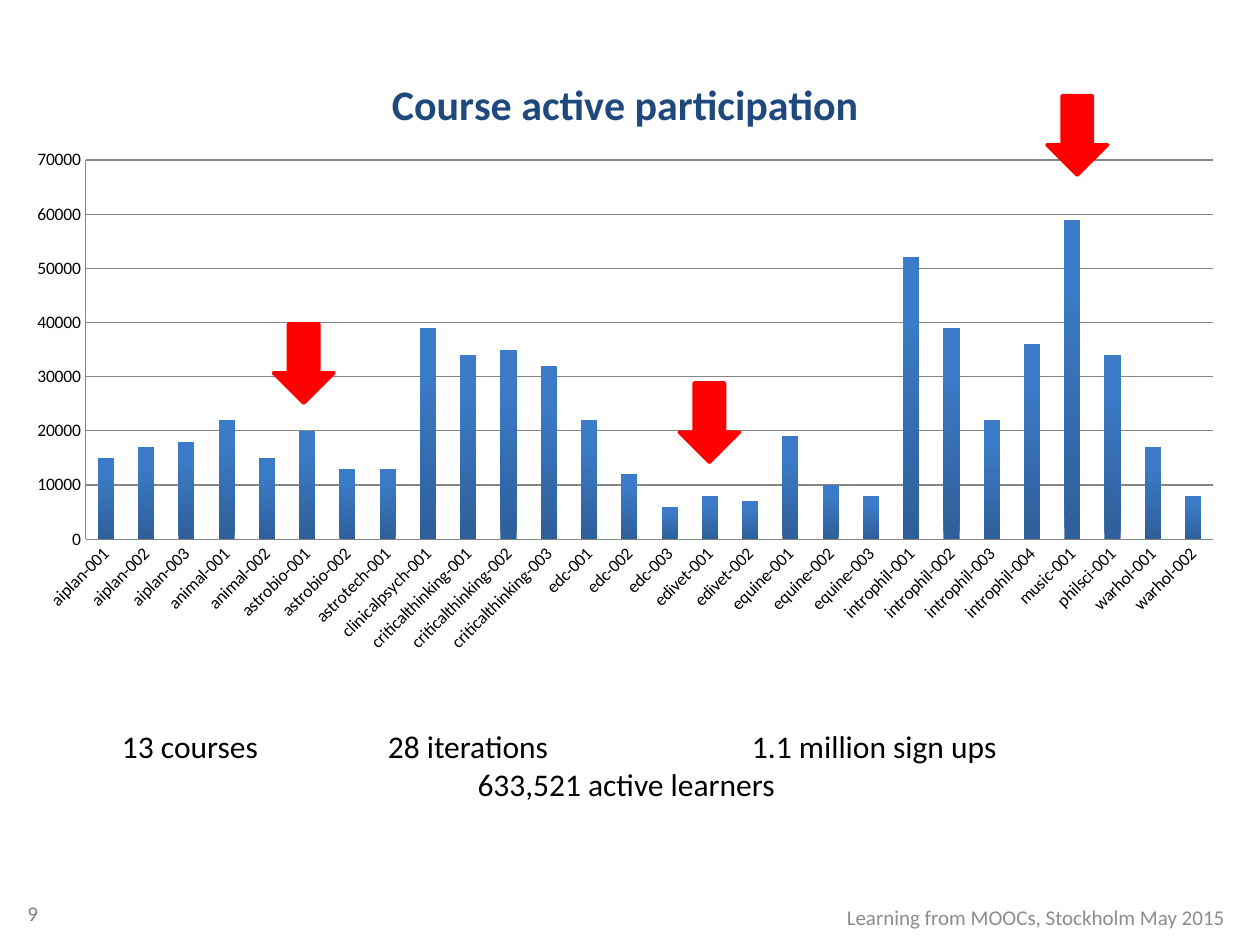
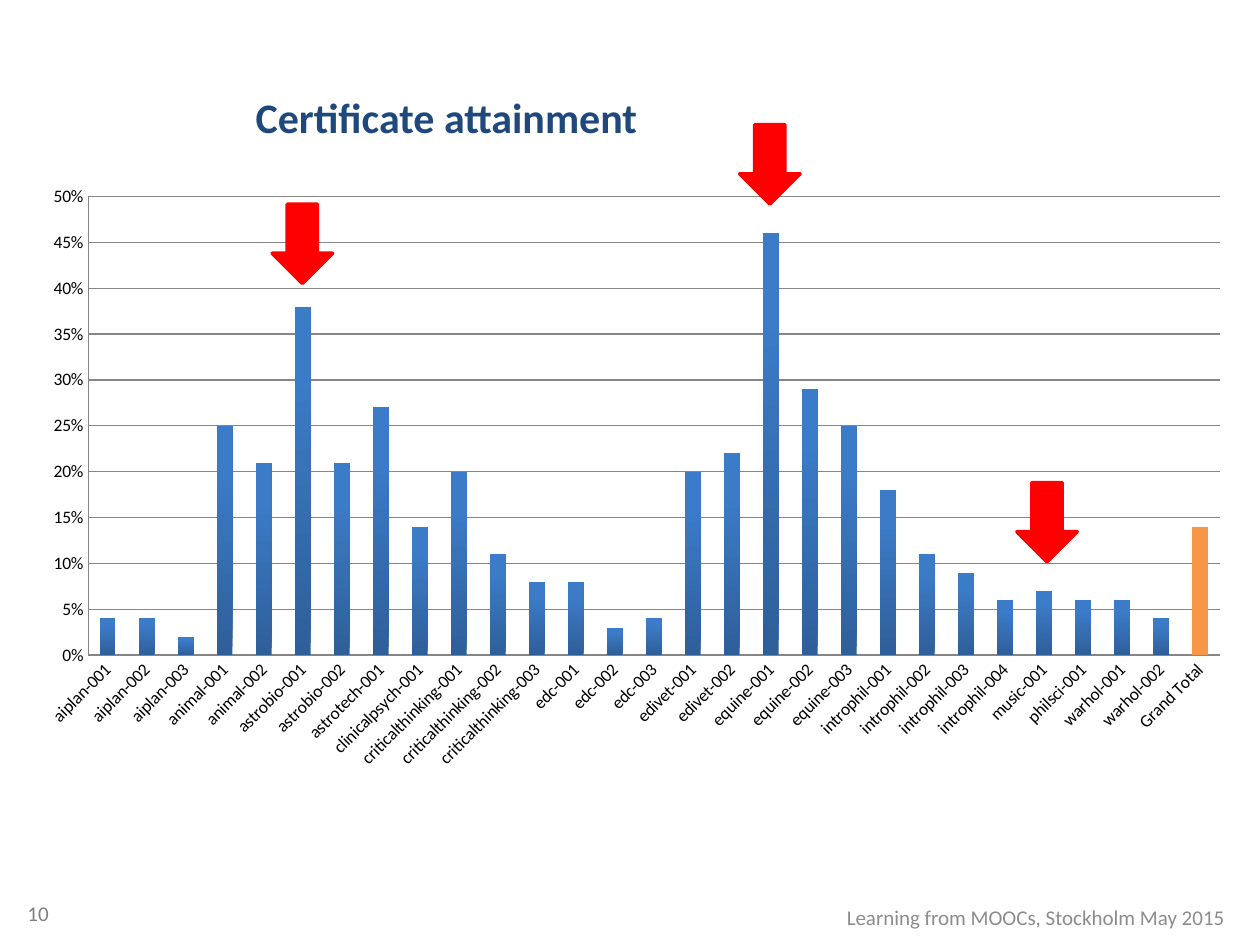
from dataclasses import dataclass

from lxml.etree import SubElement
from pptx import Presentation
from pptx.chart.data import CategoryChartData
from pptx.dml.color import RGBColor
from pptx.enum.chart import XL_CHART_TYPE, XL_TICK_MARK
from pptx.enum.shapes import MSO_SHAPE
from pptx.enum.text import MSO_ANCHOR, PP_ALIGN
from pptx.oxml import parse_xml
from pptx.oxml.ns import nsdecls, qn
from pptx.util import Inches, Pt


@dataclass(frozen=True)
class Theme:
    font: str = "Calibri"
    title: RGBColor = RGBColor(0x1F, 0x49, 0x7D)
    text: RGBColor = RGBColor(0, 0, 0)
    footer: RGBColor = RGBColor(0x8C, 0x8C, 0x8C)
    number: RGBColor = RGBColor(0x80, 0x80, 0x80)
    grid: RGBColor = RGBColor(0x86, 0x86, 0x86)
    bar_foot: RGBColor = RGBColor(0x2E, 0x5F, 0x99)
    bar_top: RGBColor = RGBColor(0x3C, 0x7B, 0xC7)
    total: RGBColor = RGBColor(0xF7, 0x96, 0x46)
    marker: RGBColor = RGBColor(0xFF, 0, 0)
    title_size: Pt = Pt(24)
    body_size: Pt = Pt(18)
    footer_size: Pt = Pt(12)
    chart_size: Pt = Pt(10)


theme = Theme()


def add_text(slide, box, lines, size, color, align=PP_ALIGN.LEFT, anchor=MSO_ANCHOR.TOP, bold=False):
    frame = slide.shapes.add_textbox(*map(Inches, box)).text_frame
    frame.word_wrap = True
    frame.vertical_anchor = anchor
    frame.text = "\n".join(lines)
    for paragraph in frame.paragraphs:
        paragraph.alignment = align
        paragraph.font.name = theme.font
        paragraph.font.size = size
        paragraph.font.bold = bold
        paragraph.font.color.rgb = color
    return frame


def set_layout(parent, chart_box, place, **modes):
    left, top, width, height = chart_box
    fractions = [(place[0] - left) / width, (place[1] - top) / height]
    if len(place) == 4:
        fractions += [place[2] / width, place[3] / height]
    for old in parent.findall(qn("c:layout")):
        parent.remove(old)
    layout = parse_xml(f"<c:layout {nsdecls('c')}><c:manualLayout/></c:layout>")
    settings = modes | {"xMode": "edge", "yMode": "edge"} | dict(zip("xywh", fractions))
    for tag, value in settings.items():
        SubElement(layout[0], qn(f"c:{tag}")).set("val", str(value))
    text = parent.find(qn("c:tx"))
    parent.insert(0 if text is None else parent.index(text) + 1, layout)


course_runs = {
    "aiplan": 3, "animal": 2, "astrobio": 2, "astrotech": 1, "clinicalpsych": 1,
    "criticalthinking": 3, "edc": 3, "edivet": 2, "equine": 3, "introphil": 4,
    "music": 1, "philsci": 1, "warhol": 2,
}
iterations = [f"{course}-{run:03}" for course, runs in course_runs.items() for run in range(1, runs + 1)]

active_learners = [
    15000, 17000, 18000, 22000, 15000, 20000, 13000, 13000, 39000, 34000,
    35000, 32000, 22000, 12000, 6000, 8000, 7000, 19000, 10000, 8000,
    52000, 39000, 22000, 36000, 59000, 34000, 17000, 8000,
]
certificate_rates = [
    0.04, 0.04, 0.02, 0.25, 0.21, 0.38, 0.21, 0.27, 0.14, 0.2,
    0.11, 0.08, 0.08, 0.03, 0.04, 0.2, 0.22, 0.46, 0.29, 0.25,
    0.18, 0.11, 0.09, 0.06, 0.07, 0.06, 0.06, 0.04, 0.14,
]

pages = [
    dict(number=9, categories=iterations, values=active_learners, top=70000, step=10000,
         format="General", box=(0.11, 0.44, 9.72, 4.83), plot=(0.68, 1.27, 8.95, 3.01),
         markers=[(8.31, 0.76), (2.17, 2.57), (5.39, 3.04)]),
    dict(number=10, categories=iterations + ["Grand Total"], values=certificate_rates, top=0.5, step=0.05,
         format="0%", box=(0.2, 1.39, 9.67, 4.8), plot=(0.7, 1.56, 8.98, 3.64),
         markers=[(5.87, 0.99), (2.16, 1.62), (8.07, 3.83)]),
]

presentation = Presentation()
presentation.slide_width = Inches(10)
presentation.slide_height = Inches(7.5)
slides = []
charts = []

for page in pages:
    slide = presentation.slides.add_slide(presentation.slide_layouts[6])
    slides.append(slide)
    add_text(slide, (5.63, 7.13, 4.19, 0.29), ["Learning from MOOCs, Stockholm May 2015"],
             theme.footer_size, theme.footer, PP_ALIGN.RIGHT, MSO_ANCHOR.MIDDLE)
    add_text(slide, (0.12, 7.11, 0.4, 0.27), [str(page["number"])],
             theme.footer_size, theme.number, anchor=MSO_ANCHOR.MIDDLE)

    data = CategoryChartData(number_format=page["format"])
    data.categories = page["categories"]
    data.add_series("Series 1", page["values"])
    chart = slide.shapes.add_chart(
        XL_CHART_TYPE.COLUMN_CLUSTERED, *map(Inches, page["box"]), data).chart
    charts.append(chart)
    chart.has_legend = False
    chart.has_title = False
    chart.font.name = theme.font
    chart.font.size = theme.chart_size
    chart.font.color.rgb = theme.text

    plot = chart.plots[0]
    plot.gap_width = 150
    plot.vary_by_categories = False
    bar_fill = plot.series[0].format.fill
    bar_fill.gradient()
    bar_fill.gradient_angle = 90
    for stop, position, color in zip(bar_fill.gradient_stops, (0, 0.8), (theme.bar_foot, theme.bar_top)):
        stop.position = position
        stop.color.rgb = color

    for axis in (chart.category_axis, chart.value_axis):
        axis.major_tick_mark = XL_TICK_MARK.NONE
        axis.minor_tick_mark = XL_TICK_MARK.NONE
        axis.format.line.color.rgb = theme.grid
        axis.tick_labels.font.size = theme.chart_size
    chart.category_axis._element.find(f"{qn('c:txPr')}/{qn('a:bodyPr')}").set("rot", "-2700000")
    value_axis = chart.value_axis
    value_axis.minimum_scale = 0
    value_axis.maximum_scale = page["top"]
    value_axis.major_unit = page["step"]
    value_axis.tick_labels.number_format = page["format"]
    value_axis.tick_labels.number_format_is_linked = False
    value_axis.major_gridlines.format.line.color.rgb = theme.grid
    plot_area = chart.category_axis._element.getparent()
    set_layout(plot_area, page["box"], page["plot"], layoutTarget="inner")

    for left, top in page["markers"]:
        marker = slide.shapes.add_shape(
            MSO_SHAPE.DOWN_ARROW, Inches(left), Inches(top), Inches(0.48), Inches(0.63))
        marker.shadow.inherit = False
        marker.fill.solid()
        marker.fill.fore_color.rgb = theme.marker
        marker.line.color.rgb = theme.marker
        marker.line.width = Pt(2)

participation_slide, certificate_slide = slides
participation_chart, certificate_chart = charts

participation_title = participation_chart.chart_title
participation_title.text_frame.text = "Course active participation"
title_font = participation_title.text_frame.paragraphs[0].font
title_font.name = theme.font
title_font.size = theme.title_size
title_font.bold = True
title_font.color.rgb = theme.title
set_layout(participation_title._element, pages[0]["box"], (3.05, 0.54))

summary = add_text(participation_slide, (0.87, 5.72, 8.2, 0.94),
                   ["13 courses\t28 iterations\t1.1 million sign ups", "633,521 active learners"],
                   theme.body_size, theme.text)
summary.paragraphs[1].alignment = PP_ALIGN.CENTER
tab_stops = parse_xml(f"<a:tabLst {nsdecls('a')}/>")
for position in (2.11, 5):
    SubElement(tab_stops, qn("a:tab"), pos=str(Inches(position)), algn="l")
summary.paragraphs[0]._p.get_or_add_pPr().insert(0, tab_stops)

add_text(certificate_slide, (1.93, 0.68, 3.28, 0.5), ["Certificate attainment"],
         theme.title_size, theme.title, bold=True)
grand_total = certificate_chart.plots[0].series[0].points[len(iterations)]
grand_total.format.fill.solid()
grand_total.format.fill.fore_color.rgb = theme.total

presentation.save("out.pptx")
